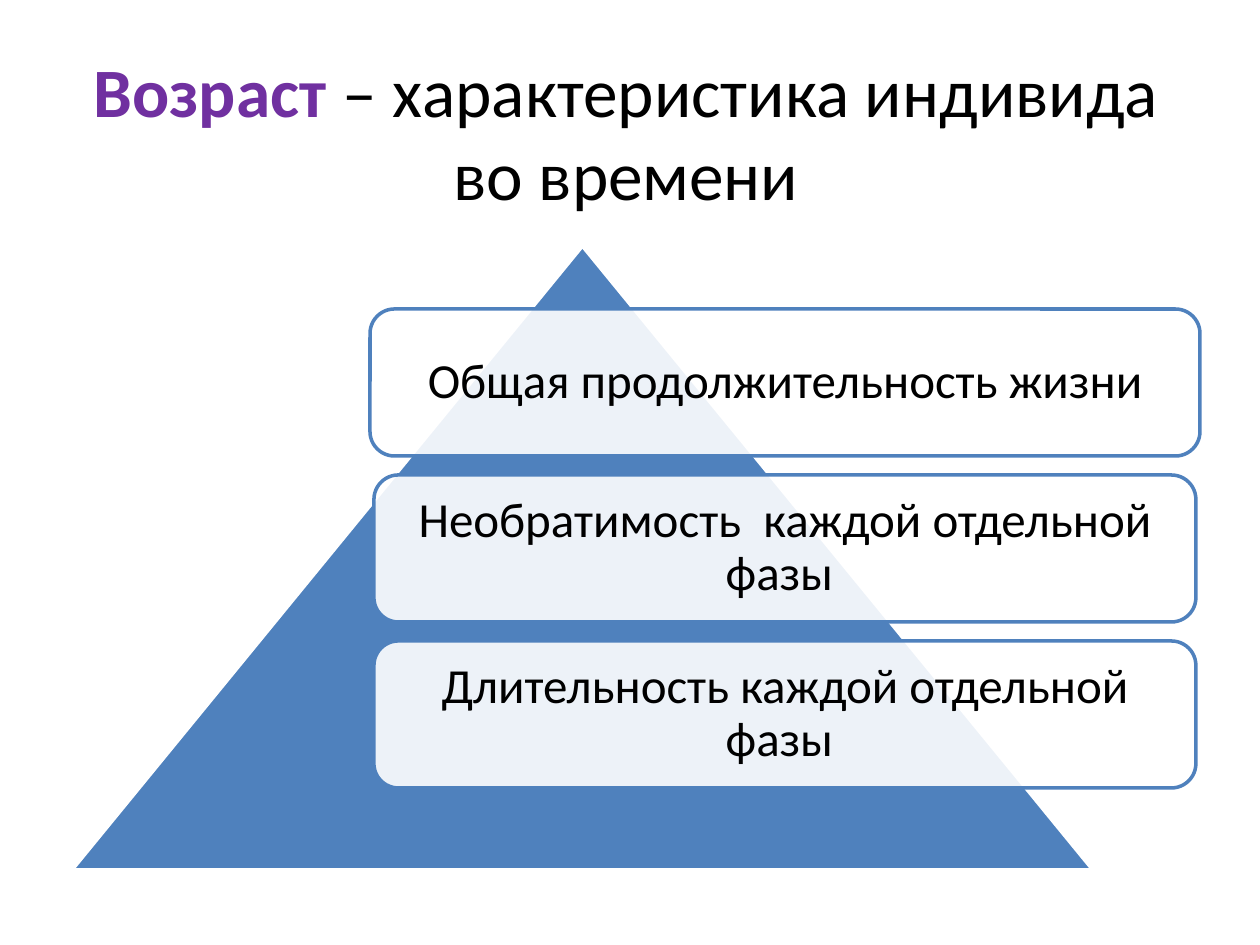
from lxml.etree import SubElement
from pptx import Presentation
from pptx.dml.color import RGBColor
from pptx.enum.shapes import MSO_SHAPE as Shape
from pptx.enum.text import MSO_ANCHOR as Anchor, PP_ALIGN as Align
from pptx.oxml.ns import qn
from pptx.util import Pt

PX = 914400 // 126
THEME = {
    "font": "Calibri",
    "title_size": Pt(39.6),
    "label_size": Pt(28),
    "text": RGBColor(0x00, 0x00, 0x00),
    "accent": RGBColor(0x70, 0x30, 0xA0),
    "blue": RGBColor(0x4F, 0x81, 0xBD),
    "white": RGBColor(0xFF, 0xFF, 0xFF),
}


def add_run(paragraph, text, size, color, bold=False):
    run = paragraph.add_run()
    run.text = text
    run.font.name = THEME["font"]
    run.font.size = size
    run.font.bold = bold
    run.font.color.rgb = color


def add_figure(preset, left, top, width, height, fill, line):
    figure = slide.shapes.add_shape(
        preset, left * PX, top * PX, width * PX, height * PX)
    figure.shadow.inherit = False
    figure.fill.solid()
    figure.fill.fore_color.rgb = fill
    figure.line.color.rgb = line
    figure.line.width = Pt(2)
    return figure


prs = Presentation()
prs.slide_width = 1260 * PX
prs.slide_height = 945 * PX
slide = prs.slides.add_slide(prs.slide_layouts[6])

# Title
title = slide.shapes.add_textbox(59 * PX, 69 * PX, 1134 * PX, 207 * PX).text_frame
title.word_wrap = True
title.vertical_anchor = Anchor.MIDDLE
heading = title.paragraphs[0]
heading.alignment = Align.CENTER
add_run(heading, "Возраст", THEME["title_size"], THEME["accent"], bold=True)
add_run(heading, " – характеристика индивида во времени",
        THEME["title_size"], THEME["text"])
heading.add_line_break()
heading.font.size = THEME["title_size"]

# Pyramid
add_figure(Shape.ISOSCELES_TRIANGLE, 72, 246, 1021, 624,
           THEME["blue"], THEME["white"])

# Translucent labels, stacked at an equal pitch on one centre line
LABEL_CENTER, LABEL_TOP, LABEL_HEIGHT, LABEL_PITCH = 785, 309, 147, 166
labels = [
    ("Общая продолжительность жизни", 830),
    ("Необратимость  каждой отдельной фазы ", 822),
    ("Длительность каждой отдельной фазы ", 822),
]
for row, (wording, width) in enumerate(labels):
    label = add_figure(Shape.ROUNDED_RECTANGLE, LABEL_CENTER - width // 2,
                       LABEL_TOP + row * LABEL_PITCH, width, LABEL_HEIGHT,
                       THEME["white"], THEME["blue"])
    fill_color = next(label.element.spPr.iter(qn("a:srgbClr")))
    SubElement(fill_color, qn("a:alpha")).set("val", "90000")

    frame = label.text_frame
    frame.word_wrap = True
    frame.vertical_anchor = Anchor.MIDDLE
    frame.margin_left = frame.margin_right = 15 * PX
    frame.margin_top = frame.margin_bottom = 15 * PX
    line = frame.paragraphs[0]
    line.alignment = Align.CENTER
    line.line_spacing = 0.9
    add_run(line, wording, THEME["label_size"], THEME["text"])

prs.save("out.pptx")
